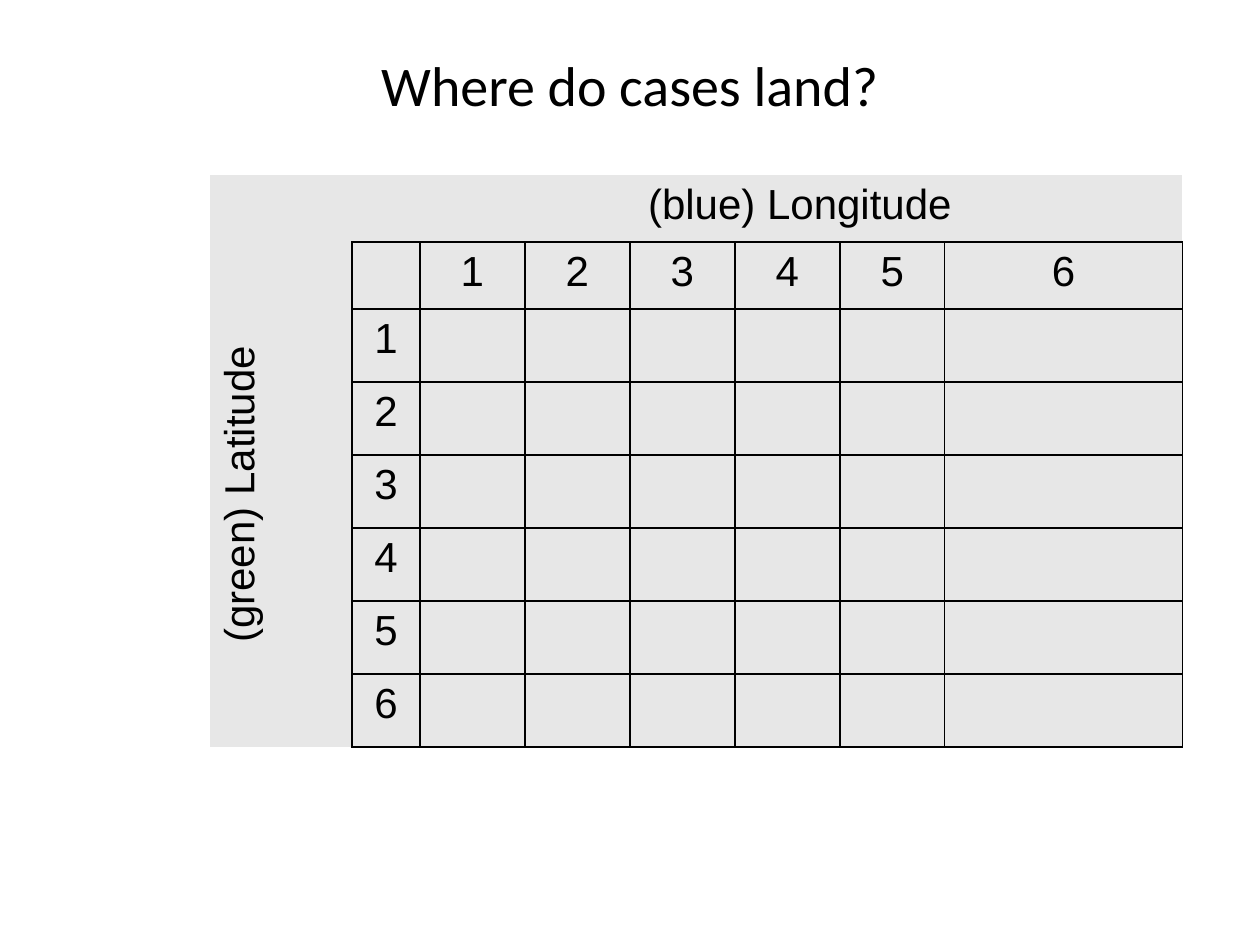
from dataclasses import dataclass

from lxml.etree import SubElement
from pptx import Presentation
from pptx.dml.color import RGBColor
from pptx.enum.text import MSO_ANCHOR, PP_ALIGN
from pptx.oxml.ns import qn
from pptx.util import Pt

EMU_PER_PX = 914400 / 126


@dataclass(frozen=True)
class Theme:
    ink: str = "000000"
    cell_fill: str = "E7E7E7"
    title_font: str = "Calibri"
    grid_font: str = "Arial"
    title_size: int = 32
    grid_size: int = 24
    border_width: int = 1


THEME = Theme()
BORDER_SIDES = ("lnL", "lnR", "lnT", "lnB")


def px(length):
    return round(length * EMU_PER_PX)


def write_centred(text_frame, text, font_name, size):
    paragraph = text_frame.paragraphs[0]
    paragraph.text = text
    paragraph.alignment = PP_ALIGN.CENTER
    font = paragraph.runs[0].font
    font.name = font_name
    font.size = Pt(size)
    font.bold = False
    font.color.rgb = RGBColor.from_string(THEME.ink)


def style_cell(cell, ruled_sides):
    """Fill the cell, rule the given sides and clear the others."""
    properties = cell._tc.get_or_add_tcPr()
    for side in BORDER_SIDES:
        line = SubElement(properties, qn(f"a:{side}"), w=str(Pt(THEME.border_width)))
        if side in ruled_sides:
            solid = SubElement(line, qn("a:solidFill"))
            SubElement(solid, qn("a:srgbClr"), val=THEME.ink)
        else:
            SubElement(line, qn("a:noFill"))
    cell.fill.solid()
    cell.fill.fore_color.rgb = RGBColor.from_string(THEME.cell_fill)


def add_title(slide, left, top, width, height, text):
    title = slide.shapes.add_textbox(px(left), px(top), px(width), px(height))
    title.text_frame.word_wrap = True
    title.text_frame.vertical_anchor = MSO_ANCHOR.MIDDLE
    write_centred(title.text_frame, text, THEME.title_font, THEME.title_size)


def add_coordinate_grid(slide, left, top, width, height, longitude, latitude, count):
    """Numbered square grid with one merged heading along each axis."""
    latitude_width, number_width, header_height = 142, 68, 67
    column_width = (width - latitude_width - number_width) // count
    row_height = (height - 2 * header_height) // count
    column_widths = [latitude_width, number_width] + [column_width] * count
    row_heights = [header_height] * 2 + [row_height] * count

    frame = slide.shapes.add_table(
        len(row_heights), len(column_widths), px(left), px(top), px(width), px(height)
    )
    grid = frame.table
    grid.first_row = False
    grid.horz_banding = False
    for column, size in zip(grid.columns, column_widths):
        column.width = px(size)
    for row, size in zip(grid.rows, row_heights):
        row.height = px(size)

    for row_index in range(len(row_heights)):
        for column_index in range(len(column_widths)):
            if row_index == 0:
                ruled_sides = ()
            elif column_index == 0:
                ruled_sides = ("lnR",)
            else:
                ruled_sides = BORDER_SIDES
            style_cell(grid.cell(row_index, column_index), ruled_sides)

    longitude_cell = grid.cell(0, 0)
    longitude_cell.merge(grid.cell(0, count + 1))
    longitude_cell.margin_left = px(latitude_width + number_width + 10)
    latitude_cell = grid.cell(1, 0)
    latitude_cell.merge(grid.cell(count + 1, 0))
    latitude_cell.vertical_anchor = MSO_ANCHOR.MIDDLE
    latitude_cell._tc.get_or_add_tcPr().set("vert", "vert270")

    labels = [(longitude_cell, longitude), (latitude_cell, latitude)]
    for number in range(1, count + 1):
        labels.append((grid.cell(1, number + 1), str(number)))
        labels.append((grid.cell(number + 1, 1), str(number)))
    for cell, label in labels:
        write_centred(cell.text_frame, label, THEME.grid_font, THEME.grid_size)


def main():
    presentation = Presentation()
    presentation.slide_width = px(1260)
    presentation.slide_height = px(945)
    slide = presentation.slides.add_slide(presentation.slide_layouts[6])
    add_title(slide, 63, 38, 1134, 93, "Where do cases land?")
    add_coordinate_grid(
        slide, 210, 175, 840, 572, "(blue) Longitude", "(green) Latitude", 6
    )
    presentation.save("out.pptx")


if __name__ == "__main__":
    main()
